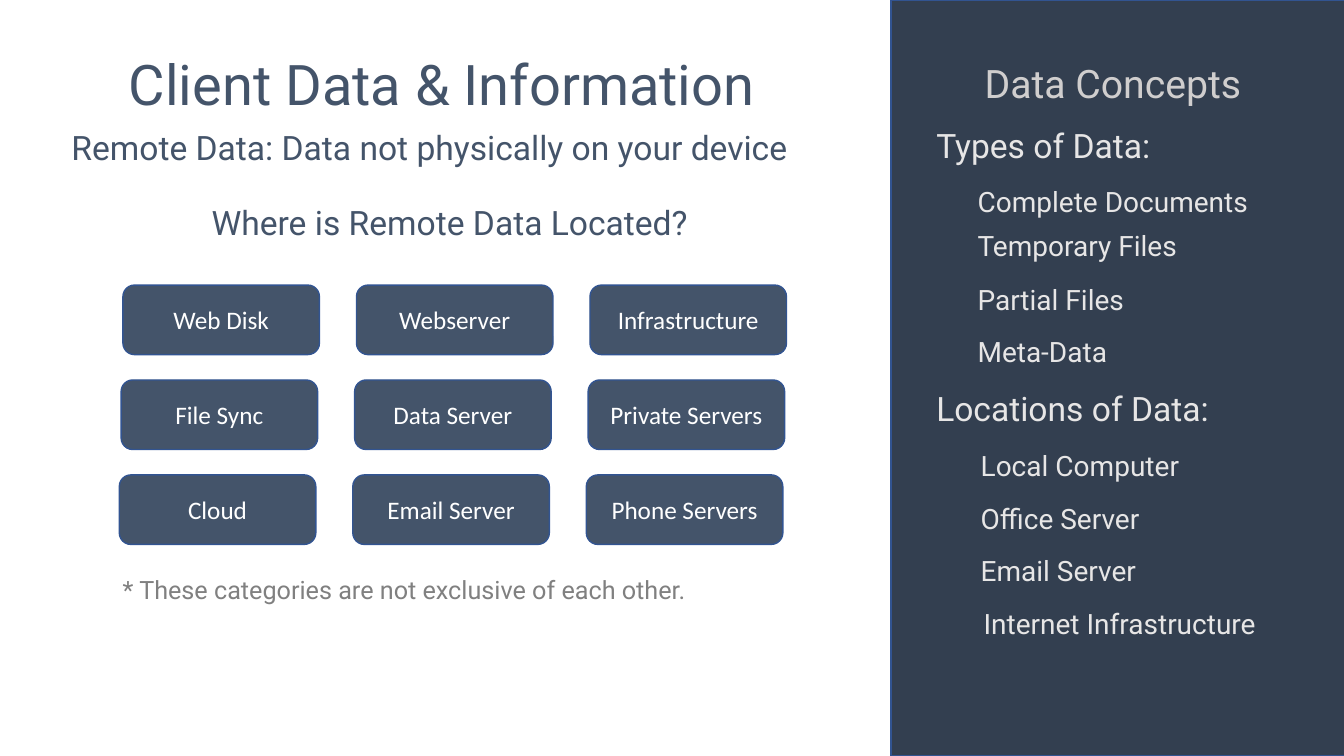
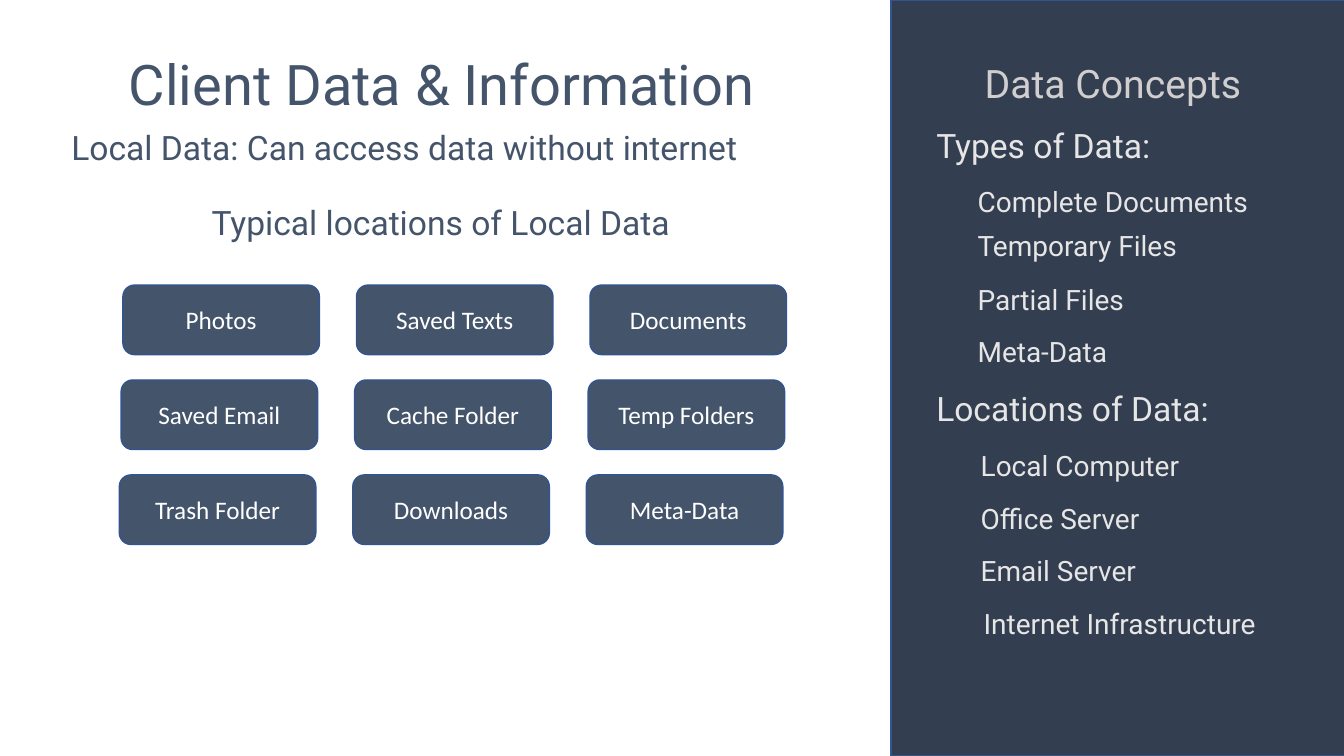
"""Build two slides on remote and local client data with a shared sidebar."""
from dataclasses import dataclass

from pptx import Presentation
from pptx.dml.color import RGBColor
from pptx.enum.shapes import MSO_SHAPE
from pptx.enum.text import MSO_ANCHOR, MSO_AUTO_SIZE, PP_ALIGN
from pptx.shapes.autoshape import Shape
from pptx.slide import Slide
from pptx.text.text import _Paragraph
from pptx.util import Pt


@dataclass(frozen=True)
class TextStyle:
    size: float
    color: str
    height: float = 0
    font: str = "Roboto"


@dataclass(frozen=True)
class Theme:
    panel: str = "333F50"
    card: str = "44546A"
    outline: str = "325491"
    title: TextStyle = TextStyle(40, "44546A", 55.7)
    lead: TextStyle = TextStyle(24, "44546A", 36.3)
    note: TextStyle = TextStyle(18, "808080", 29)
    card_text: TextStyle = TextStyle(18, "FFFFFF", font="Calibri")
    side_title: TextStyle = TextStyle(28, "D0CECE", 41.2)
    side_heading: TextStyle = TextStyle(24, "E7E6E6", 36.3)
    side_item: TextStyle = TextStyle(20, "E7E6E6", 31.5)


@dataclass(frozen=True)
class Label:
    text: str
    left: float
    top: float
    width: float
    style: TextStyle


@dataclass(frozen=True)
class Page:
    labels: list[Label]
    cards: list[list[str]]


THEME = Theme()
SLIDE_W, SLIDE_H = 960, 540
PANEL_LEFT, PANEL_W = 636.5, 325.4
CARD_LEFT, CARD_TOP = 87.8, 203.6
CARD_W, CARD_H = 140.4, 49.7
CARD_STEP_X, CARD_STEP_Y = 166.8, 67.8
ROW_SHIFT = -1.3
LOCATION_TOP, LOCATION_STEP = 316.8, 37.6

LOCATIONS = [
    ("Local Computer", 693.4, 157),
    ("Office Server", 693.4, 131),
    ("Email Server", 693.4, 126.7),
    ("Internet Infrastructure", 695.5, 211),
]

SHARED_LABELS = [
    Label("Client Data & Information", 85, 31.7, 476.6, THEME.title),
    Label("Data Concepts", 696.2, 38.9, 200.2, THEME.side_title),
    Label("Types of Data:", 661.7, 85.7, 171.4, THEME.side_heading),
    Label("Complete Documents", 691.2, 128.2, 209.5, THEME.side_item),
    Label("Temporary Files", 691.2, 159.8, 159.1, THEME.side_item),
    Label("Partial Files", 691.2, 198, 119.5, THEME.side_item),
    Label("Meta-Data", 691.2, 235.4, 108, THEME.side_item),
    Label("Locations of Data:", 661.7, 273.6, 212.4, THEME.side_heading),
] + [
    Label(text, left, LOCATION_TOP + i * LOCATION_STEP, width, THEME.side_item)
    for i, (text, left, width) in enumerate(LOCATIONS)
]

PAGES = [
    Page(
        [
            Label("Remote Data: Data not physically on your device",
                  43.9, 87.1, 534.2, THEME.lead),
            Label("Where is Remote Data Located?", 144, 140.4, 358.6, THEME.lead),
            Label("* These categories are not exclusive of each other.",
                  80.6, 406.8, 421.9, THEME.note),
        ],
        [
            ["Web Disk", "Webserver", "Infrastructure"],
            ["File Sync", "Data Server", "Private Servers"],
            ["Cloud", "Email Server", "Phone Servers"],
        ],
    ),
    Page(
        [
            Label("Local Data: Can access data without internet",
                  43.9, 87.1, 496.8, THEME.lead),
            Label("Typical locations of Local Data", 144, 140.4, 346.3, THEME.lead),
        ],
        [
            ["Photos", "Saved Texts", "Documents"],
            ["Saved Email", "Cache Folder", "Temp Folders"],
            ["Trash Folder", "Downloads", "Meta-Data"],
        ],
    ),
]


def write(p: _Paragraph, text: str, style: TextStyle) -> None:
    p.text = text
    p.font.name = style.font
    p.font.size = Pt(style.size)
    p.font.color.rgb = RGBColor.from_string(style.color)


def add_label(s: Slide, label: Label) -> None:
    sp = s.shapes.add_textbox(Pt(label.left), Pt(label.top),
                              Pt(label.width), Pt(label.style.height))
    tf = sp.text_frame
    tf.word_wrap = False
    tf.auto_size = MSO_AUTO_SIZE.SHAPE_TO_FIT_TEXT
    write(tf.paragraphs[0], label.text, label.style)


def add_box(s: Slide, kind: MSO_SHAPE, left: float, top: float,
            width: float, height: float, fill: str) -> Shape:
    sp = s.shapes.add_shape(kind, Pt(left), Pt(top), Pt(width), Pt(height))
    sp.shadow.inherit = False
    sp.fill.solid()
    sp.fill.fore_color.rgb = RGBColor.from_string(fill)
    sp.line.color.rgb = RGBColor.from_string(THEME.outline)
    sp.line.width = Pt(1)
    return sp


def add_cards(s: Slide, cards: list[list[str]]) -> None:
    for row, texts in enumerate(cards):
        for col, text in enumerate(texts):
            sp = add_box(s, MSO_SHAPE.ROUNDED_RECTANGLE,
                         CARD_LEFT + col * CARD_STEP_X + row * ROW_SHIFT,
                         CARD_TOP + row * CARD_STEP_Y,
                         CARD_W, CARD_H, THEME.card)
            tf = sp.text_frame
            tf.vertical_anchor = MSO_ANCHOR.MIDDLE
            p = tf.paragraphs[0]
            p.alignment = PP_ALIGN.CENTER
            write(p, text, THEME.card_text)


def main() -> None:
    prs = Presentation()
    prs.slide_width, prs.slide_height = Pt(SLIDE_W), Pt(SLIDE_H)
    for page in PAGES:
        s = prs.slides.add_slide(prs.slide_layouts[6])
        add_box(s, MSO_SHAPE.RECTANGLE, PANEL_LEFT, 0, PANEL_W, SLIDE_H, THEME.panel)
        for label in SHARED_LABELS + page.labels:
            add_label(s, label)
        add_cards(s, page.cards)
    prs.save("out.pptx")


if __name__ == "__main__":
    main()
